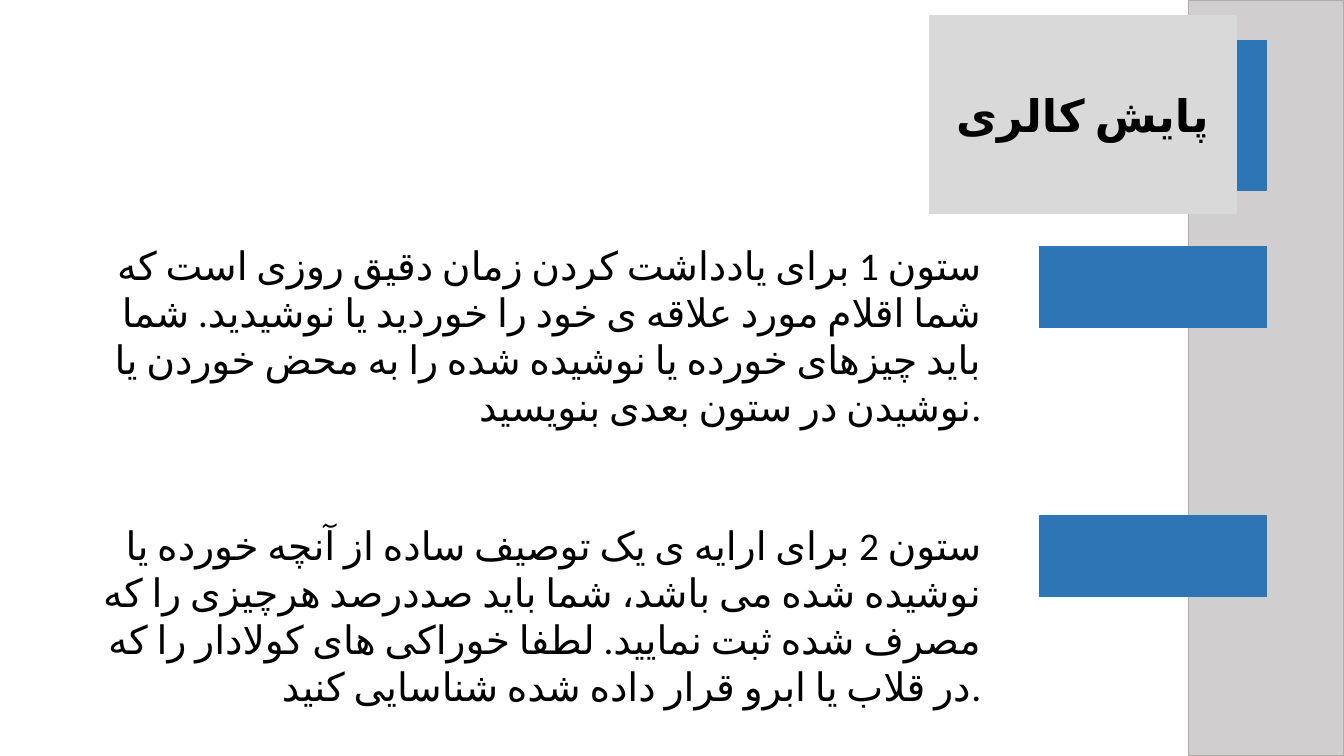
from lxml import etree
from pptx import Presentation
from pptx.dml.color import RGBColor
from pptx.enum.lang import MSO_LANGUAGE_ID
from pptx.enum.shapes import MSO_SHAPE
from pptx.enum.text import MSO_AUTO_SIZE, PP_ALIGN
from pptx.oxml.ns import qn
from pptx.util import Inches, Pt

RECTANGLE = MSO_SHAPE.RECTANGLE
FIT_SHAPE = MSO_AUTO_SIZE.SHAPE_TO_FIT_TEXT
CENTER, RIGHT = PP_ALIGN.CENTER, PP_ALIGN.RIGHT
PERSIAN = MSO_LANGUAGE_ID.FARSI

BLACK = RGBColor(0x00, 0x00, 0x00)
BLUE = RGBColor(0x2E, 0x75, 0xB6)
BAND_GRAY = RGBColor(0xD0, 0xCE, 0xCE)
BAND_EDGE = RGBColor(0xAF, 0xAB, 0xAB)
TITLE_GRAY = RGBColor(0xD9, 0xD9, 0xD9)
FONT = "Calibri"

TITLE = "پایش کالری"
SECTIONS = [
    (2.45, 2.34, "ستون 1 برای یادداشت کردن زمان دقیق روزی است که شما اقلام مورد علاقه ی خود را خوردید یا نوشیدید. شما باید چیزهای خورده یا نوشیده شده را به محض خوردن یا نوشیدن در ستون بعدی بنویسید."),
    (5.12, 5.12, "ستون 2 برای ارایه ی یک توصیف ساده از آنچه خورده یا نوشیده شده می باشد، شما باید صددرصد هرچیزی را که مصرف شده ثبت نمایید. لطفا خوراکی های کولادار را که در قلاب یا ابرو قرار داده شده شناسایی کنید."),
]


def add_block(page, left, top, width, height, fill, edge):
    block = page.shapes.add_shape(
        RECTANGLE, Inches(left), Inches(top), Inches(width), Inches(height))
    block.shadow.inherit = False
    block.fill.solid()
    block.fill.fore_color.rgb = fill
    block.line.color.rgb = edge
    block.line.width = Pt(1)


def add_text(page, left, top, width, height, text, size, align, bold=False):
    box = page.shapes.add_textbox(
        Inches(left), Inches(top), Inches(width), Inches(height))
    frame = box.text_frame
    frame.word_wrap = True
    frame.auto_size = FIT_SHAPE
    frame.text = text
    para = frame.paragraphs[0]
    para.alignment = align
    span = para.runs[0]
    font = span.font
    font.language_id = PERSIAN
    font.name = FONT
    font.size = Pt(size)
    font.bold = bold
    font.color.rgb = BLACK
    properties = span._r.get_or_add_rPr()
    etree.SubElement(properties, qn("a:cs")).set("typeface", FONT)


def main():
    deck = Presentation()
    deck.slide_width, deck.slide_height = Inches(13.33), Inches(7.5)
    page = deck.slides.add_slide(deck.slide_layouts[6])

    add_block(page, 11.79, 0, 1.54, 7.5, BAND_GRAY, BAND_EDGE)
    for marker_top, text_top, text in SECTIONS:
        add_block(page, 10.31, marker_top, 2.25, 0.8, BLUE, BLUE)
        add_text(page, 0.62, text_top, 9.21, 1.82, text, 28, RIGHT)

    add_block(page, 9.42, 0.4, 3.14, 1.49, BLUE, BLUE)
    add_block(page, 9.22, 0.16, 3.04, 1.96, TITLE_GRAY, TITLE_GRAY)
    add_text(page, 9.12, 0.82, 3.23, 0.64, TITLE, 32, CENTER, bold=True)

    deck.save("out.pptx")


if __name__ == "__main__":
    main()
